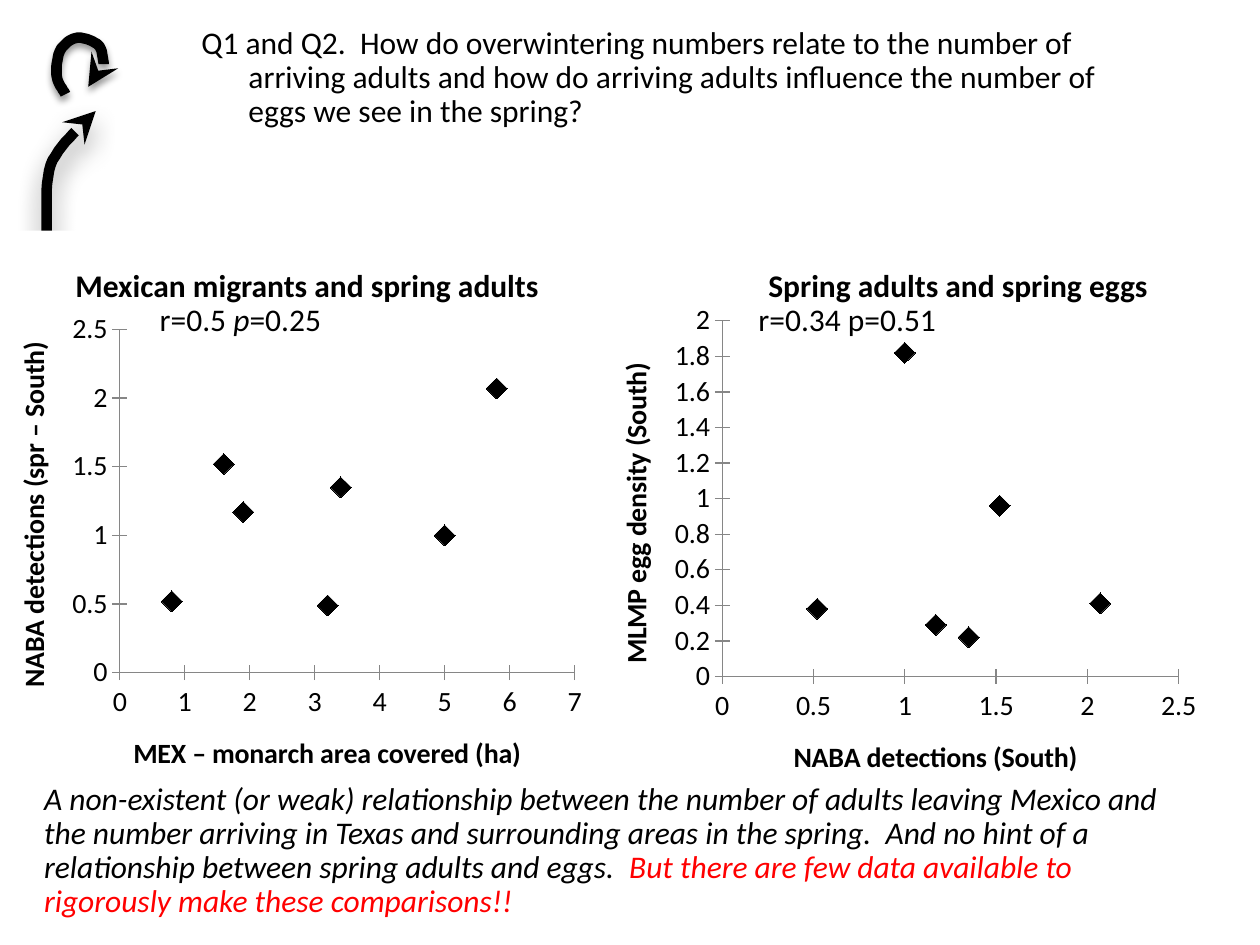
import pptx
import pptx.chart.data
import pptx.dml.color
import pptx.enum.chart
import pptx.enum.shapes
import pptx.enum.text
import pptx.oxml
import pptx.util
from pptx.oxml import ns

Cm, Pt = pptx.util.Cm, pptx.util.Pt
COLOURS = {"text": "000000", "alert": "FF0000", "paper": "FFFFFF", "axis": "868686"}


def rgb(name):
    return pptx.dml.color.RGBColor.from_string(COLOURS[name])


def child_xml(markup):
    """Parse one DrawingML or chart element, declaring its namespaces."""
    tag, rest = markup.split(" ", 1)
    return pptx.oxml.parse_xml(f"{tag} {ns.nsdecls('a', 'c')} {rest}")


def bezier(points, steps=10):
    """Sample a chain of cubic curves: a start point, then three points a curve."""
    sampled = []
    for first in range(0, len(points) - 1, 3):
        a, b, c, d = points[first:first + 4]
        for step in range(1, steps + 1):
            t = step / steps
            u = 1 - t
            sampled.append(tuple(
                u**3 * a[i] + 3 * u * u * t * b[i] + 3 * u * t * t * c[i] + t**3 * d[i]
                for i in (0, 1)))
    return sampled


class SlideWriter:
    font_name = "Calibri"
    text_size = Pt(18)
    chart_size = Pt(16)

    def __init__(self, slide):
        self.slide = slide

    def style(self, font, size, bold=False, italic=None):
        font.name, font.size, font.bold, font.italic = self.font_name, size, bold, italic
        font.color.rgb = rgb("text")

    def text(self, box, runs, wrap=True, bold=False, italic=None, spacing=None, hanging=None):
        """Write one paragraph; each run is (text, font overrides)."""
        frame = self.slide.shapes.add_textbox(*map(Cm, box)).text_frame
        frame.word_wrap = wrap
        frame.auto_size = pptx.enum.text.MSO_AUTO_SIZE.SHAPE_TO_FIT_TEXT
        paragraph = frame.paragraphs[0]
        self.style(paragraph.font, self.text_size, bold, italic)
        if spacing:
            paragraph.line_spacing = spacing
        if hanging:
            properties = paragraph._p.get_or_add_pPr()
            properties.set("marL", str(Cm(hanging)))
            properties.set("indent", str(-Cm(hanging)))
        for words, overrides in runs:
            run = paragraph.add_run()
            run.text = words
            if "colour" in overrides:
                run.font.color.rgb = rgb(overrides["colour"])
            if "italic" in overrides:
                run.font.italic = overrides["italic"]

    def cover(self, box):
        panel = self.slide.shapes.add_shape(
            pptx.enum.shapes.MSO_SHAPE.RECTANGLE, *map(Cm, box))
        panel.shadow.inherit = False
        panel.fill.solid()
        panel.fill.fore_color.rgb = rgb("paper")
        panel.line.fill.background()

    def curved_arrow(self, points, blur, distance):
        """Draw an arrow along curves whose points are in hundredths of a cm."""
        builder = self.slide.shapes.build_freeform(*points[0], scale=Cm(0.01))
        builder.add_line_segments(bezier(points), close=False)
        arrow = builder.convert_to_shape()
        arrow.fill.background()
        arrow.line.width = Pt(6)
        arrow.line.color.rgb = rgb("text")
        arrow.line._ln.append(child_xml('<a:tailEnd type="stealth"/>'))
        arrow.shadow.inherit = False
        arrow._element.spPr.find(ns.qn("a:effectLst")).append(child_xml(
            f'<a:outerShdw blurRad="{Pt(blur)}" dist="{Pt(distance)}" dir="5400000" '
            f'rotWithShape="0"><a:srgbClr val="{COLOURS["text"]}">'
            '<a:alpha val="40000"/></a:srgbClr></a:outerShdw>'))

    def axis(self, axis, title):
        axis.has_major_gridlines = False
        axis.major_tick_mark = pptx.enum.chart.XL_TICK_MARK.CROSS
        axis.format.line.color.rgb = rgb("axis")
        self.style(axis.tick_labels.font, self.chart_size)
        heading = axis.axis_title.text_frame
        heading.text = title
        self.style(heading.paragraphs[0].font, self.chart_size, bold=True)

    def scatter(self, box, points, x_title, y_title, x_max, x_step, plot_area):
        data = pptx.chart.data.XyChartData()
        series_data = data.add_series("Series 1")
        for x, y in points:
            series_data.add_data_point(x, y)
        chart = self.slide.shapes.add_chart(
            pptx.enum.chart.XL_CHART_TYPE.XY_SCATTER, *map(Cm, box), data).chart
        chart.has_title = chart.has_legend = False
        self.style(chart.font, self.chart_size)
        self.axis(chart.category_axis, x_title)
        self.axis(chart.value_axis, y_title)
        chart.category_axis.maximum_scale = x_max
        chart.category_axis.major_unit = x_step

        plot = chart.plots[0]
        plot.vary_by_categories = False
        series = plot.series[0]
        series.smooth = False
        series.format.line.fill.background()
        series.marker.style = pptx.enum.chart.XL_MARKER_STYLE.DIAMOND
        series.marker.size = 12
        series.marker.format.fill.solid()
        series.marker.format.fill.fore_color.rgb = rgb("text")
        series.marker.format.line.color.rgb = rgb("text")

        area = chart._chartSpace.chart.plotArea
        for layout in area.findall(ns.qn("c:layout")):
            area.remove(layout)
        sizes = "".join(f'<c:{key} val="{value}"/>' for key, value in zip("xywh", plot_area))
        area.insert(0, child_xml(
            '<c:layout ><c:manualLayout><c:layoutTarget val="inner"/>'
            f'<c:xMode val="edge"/><c:yMode val="edge"/>{sizes}</c:manualLayout></c:layout>'))


def main():
    deck = pptx.Presentation()
    deck.slide_width, deck.slide_height = Cm(25.4), Cm(19.05)
    writer = SlideWriter(deck.slides.add_slide(deck.slide_layouts[6]))

    writer.text((3.81, 0.43, 19.05, 2.34), [(
        "Q1 and Q2.  How do overwintering numbers relate to the number of arriving adults "
        "and how do arriving adults influence the number of eggs we see in the spring?", {})],
        spacing=0.9, hanging=0.95)

    writer.curved_arrow(
        [(94, 478), (94, 470), (94, 463), (94, 455), (94, 432), (91, 368), (102, 333),
         (114, 300), (150, 269), (165, 251), (180, 231), (185, 229), (193, 224)],
        blur=15, distance=8)
    writer.curved_arrow(
        [(132, 190), (124, 178), (114, 163), (114, 147), (112, 132), (117, 109), (124, 97),
         (132, 86), (147, 76), (160, 76), (170, 76), (193, 84), (201, 94),
         (208, 107), (211, 135), (208, 147), (203, 163), (183, 163), (178, 175)],
        blur=4, distance=3)
    writer.cover((0, 4.65, 25.4, 14.4))

    writer.text((0.64, 15.67, 23.06, 3.02), [
        ("A non-existent (or weak) relationship between the number of adults leaving Mexico "
         "and the number arriving in Texas and surrounding areas in the spring.  And no hint "
         "of a relationship between spring adults and eggs.  ", {}),
        ("But there are few data available to rigorously make these comparisons!!",
         {"colour": "alert"})], italic=True, spacing=0.9)

    writer.scatter(
        (0, 6.3, 12.07, 9.8),
        [(3.2, 0.49), (0.8, 0.52), (3.4, 1.35), (1.9, 1.17), (5, 1), (5.8, 2.07), (1.6, 1.52)],
        "MEX – monarch area covered (ha)", "NABA detections (spr – South)",
        x_max=7, x_step=1, plot_area=(0.2, 0.03, 0.76, 0.71))
    writer.scatter(
        (11.86, 5.87, 12.27, 9.96),
        [(0.52, 0.38), (1.35, 0.22), (1.17, 0.29), (1, 1.82), (2.07, 0.41), (1.52, 0.96)],
        "NABA detections (South)", "MLMP egg density (South)",
        x_max=2.5, x_step=0.5, plot_area=(0.22, 0.06, 0.75, 0.72))

    for left, width, heading in ((1.27, 9.93, "Mexican migrants and spring adults"),
                                 (15.24, 8.23, "Spring adults and spring eggs")):
        writer.text((left, 5.23, width, 1.03), [(heading, {})], wrap=False, bold=True)
    for left, width, correlation in (
            (2.97, 3.81, [("r=0.5 ", {}), ("p", {"italic": True}), ("=0.25", {})]),
            (15.04, 4.14, [("r=0.34 p=0.51", {})])):
        writer.text((left, 5.92, width, 1.03), correlation, wrap=False)

    deck.save("out.pptx")


if __name__ == "__main__":
    main()
